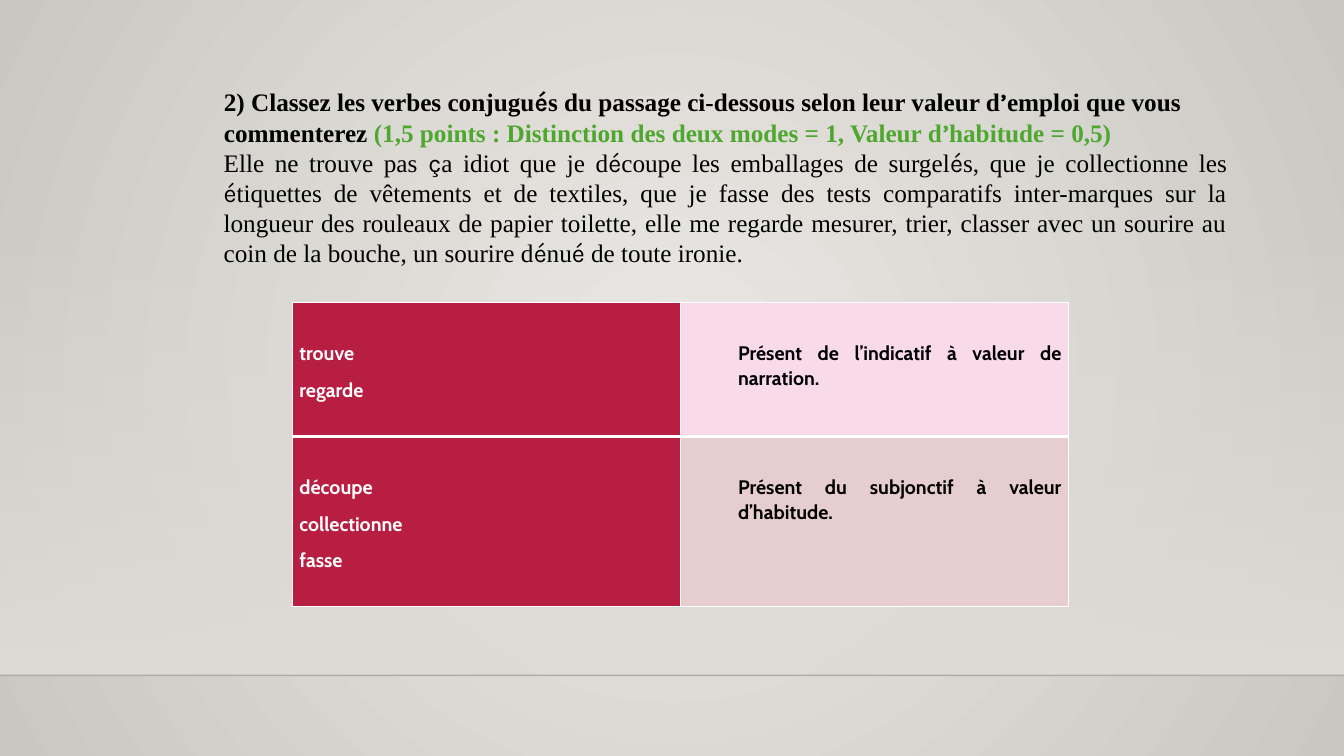
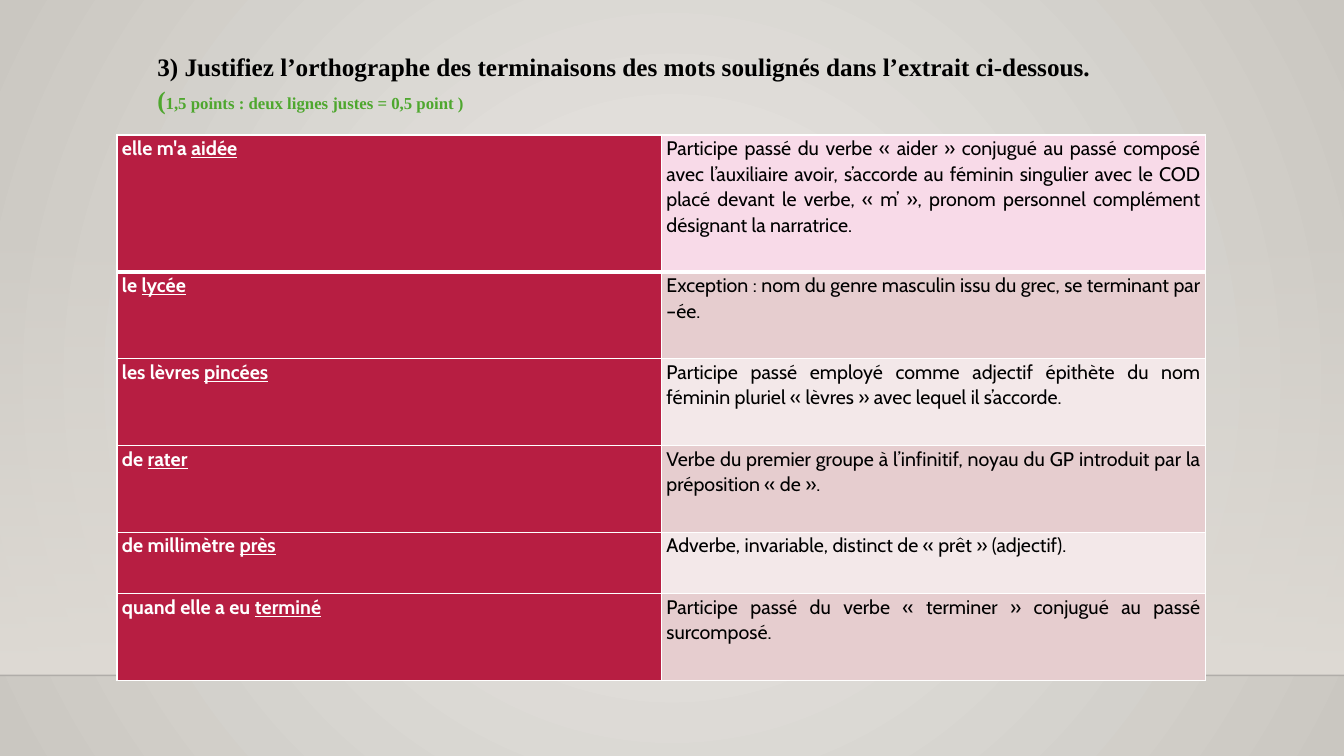
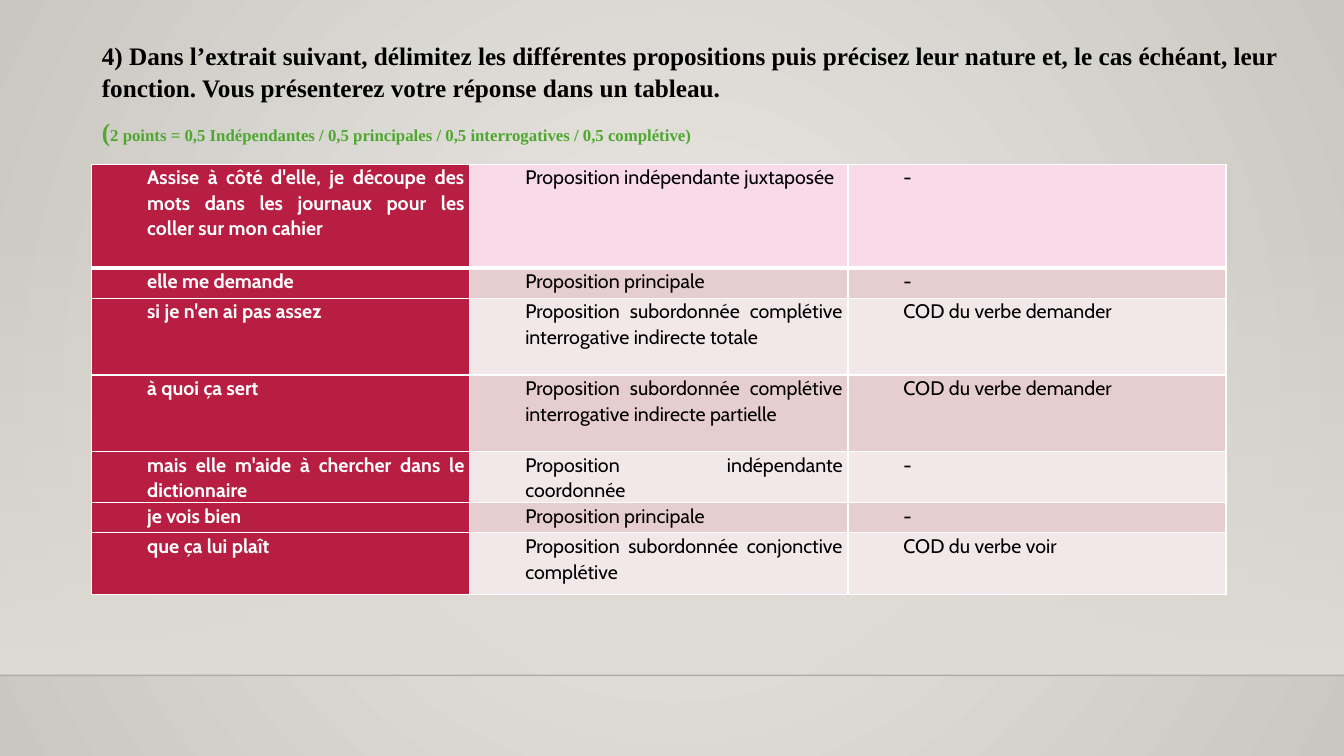
import itertools

import pptx
import pptx.util
import pptx.dml.color
import pptx.enum.shapes
import pptx.enum.text
import pptx.oxml
import pptx.oxml.ns
from lxml import etree

Inches = pptx.util.Inches
Pt = pptx.util.Pt
RGB = pptx.dml.color.RGBColor
ALIGN = pptx.enum.text.PP_ALIGN
ANCHOR = pptx.enum.text.MSO_ANCHOR
qn = pptx.oxml.ns.qn

# Shared look
BLACK, WHITE = RGB(0, 0, 0), RGB(255, 255, 255)
GREEN = RGB(0x4E, 0xA7, 0x2E)
CRIMSON = RGB(0xB7, 0x1E, 0x42)
PINK = RGB(0xF8, 0xDA, 0xE8)
ROSE = RGB(0xE6, 0xCD, 0xCF)
PALE_ROSE = RGB(0xF3, 0xE8, 0xE9)
GLOW, EDGE = RGB(0xEC, 0xEA, 0xE7), RGB(0xCA, 0xC7, 0xC1)
WALL, FLOOR_LINE = RGB(0xDF, 0xDB, 0xD5), RGB(0, 0, 1)
SERIF, ACCENT_FONT, TABLE_FONT = "Times New Roman", "Karla", "Cabin"
ACCENTS = "éç’"
SLIDE_W, SLIDE_H, FLOOR = 13.33, 7.5, 6.7

# Headings: paragraphs of (text, size, colour)
VERBS_TITLE = [[
    ("2) Classez les verbes conjugués du passage ci-dessous selon leur valeur "
     "d’emploi que vous commenterez ", 18, BLACK),
    ("(1,5 points : Distinction des deux modes = 1, Valeur d’habitude = 0,5)",
     18, GREEN)]]
VERBS_PASSAGE = [[
    ("Elle ne trouve pas ça idiot que je découpe les emballages de surgelés, "
     "que je collectionne les étiquettes de vêtements et de textiles, que je "
     "fasse des tests comparatifs inter-marques sur la longueur des rouleaux "
     "de papier toilette, elle me regarde mesurer, trier, classer avec un "
     "sourire au coin de la bouche, un sourire dénué de toute ironie.",
     18, BLACK)]]
SPELLING_TITLE = [
    [("3) Justifiez l’orthographe des terminaisons des mots soulignés dans "
      "l’extrait ci-dessous.", 18, BLACK)],
    [("(", 18, GREEN),
     ("1,5 points : deux lignes justes = 0,5 point )", 12, GREEN)]]
CLAUSES_TITLE = [
    [("4) Dans l’extrait suivant, délimitez les différentes propositions puis "
      "précisez leur nature et, le cas échéant, leur fonction. Vous "
      "présenterez votre réponse dans un tableau.", 18, BLACK)],
    [("(", 18, GREEN),
     ("2 points = 0,5 Indépendantes / 0,5 principales / 0,5 interrogatives / "
      "0,5 complétive)", 12, GREEN)]]

# Tables: rows of cells; a list holds several paragraphs,
# a tuple holds plain text and its underlined word
VERBS = [
    (["trouve", "regarde"], "Présent de l’indicatif à valeur de narration."),
    (["découpe", "collectionne", "fasse"],
     "Présent du subjonctif à valeur d’habitude."),
]
SPELLING = [
    (("elle m'a ", "aidée"),
     "Participe passé du verbe « aider » conjugué au passé composé avec "
     "l’auxiliaire avoir, s’accorde au féminin singulier avec le COD placé "
     "devant le verbe, « m’ », pronom personnel complément désignant la "
     "narratrice."),
    (("le ", "lycée"),
     "Exception : nom du genre masculin issu du grec, se terminant par –ée."),
    (("les lèvres ", "pincées"),
     "Participe passé employé comme adjectif épithète du nom féminin pluriel "
     "« lèvres » avec lequel il s’accorde."),
    (("de ", "rater"),
     "Verbe du premier groupe à l’infinitif, noyau du GP introduit par la "
     "préposition « de »."),
    (("de millimètre ", "près"),
     "Adverbe, invariable, distinct de « prêt » (adjectif)."),
    (("quand elle a eu ", "terminé"),
     "Participe passé du verbe « terminer » conjugué au passé surcomposé."),
]
CLAUSES = [
    ("Assise à côté d'elle, je découpe des mots dans les journaux pour les "
     "coller sur mon cahier", "Proposition indépendante juxtaposée", "-"),
    ("elle me demande", "Proposition principale", "-"),
    ("si je n'en ai pas assez",
     "Proposition subordonnée complétive interrogative indirecte totale",
     "COD du verbe demander"),
    ("à quoi ça sert",
     "Proposition subordonnée complétive interrogative indirecte partielle",
     "COD du verbe demander"),
    ("mais elle m'aide à chercher dans le dictionnaire",
     "Proposition indépendante coordonnée", "-"),
    ("je vois bien", "Proposition principale", "-"),
    ("que ça lui plaît", "Proposition subordonnée conjonctive complétive",
     "COD du verbe voir"),
]


def set_alpha(fill_color, percent):
    alpha = etree.SubElement(fill_color, qn("a:alpha"))
    alpha.set("val", str(percent * 1000))


def two_stop_gradient(fill, first, last):
    fill.gradient()
    for stop, color in zip(fill.gradient_stops, (first, last)):
        stop.color.rgb = color


def decorate_master(prs, slide):
    """Put the radial background, wall and floor line on the master."""
    master = prs.slide_master
    two_stop_gradient(master.background.fill, GLOW, EDGE)
    linear = master.element.xpath("p:cSld/p:bg//a:lin")[0]
    radial = etree.Element(qn("a:path"), path="circle")
    etree.SubElement(radial, qn("a:fillToRect"),
                     l="50000", t="50000", r="50000", b="50000")
    linear.getparent().replace(linear, radial)

    wall = slide.shapes.add_shape(
        pptx.enum.shapes.MSO_SHAPE.RECTANGLE,
        0, Inches(2.21), Inches(SLIDE_W), Inches(FLOOR - 2.21))
    wall.shadow.inherit = False
    wall.line.fill.background()
    two_stop_gradient(wall.fill, WALL, WALL)
    wall.fill.gradient_angle = 270
    set_alpha(wall._element.xpath(".//a:gs/a:srgbClr")[0], 0)

    floor = slide.shapes.add_connector(
        pptx.enum.shapes.MSO_CONNECTOR.STRAIGHT,
        0, Inches(FLOOR), Inches(SLIDE_W), Inches(FLOOR))
    floor.line.color.rgb = FLOOR_LINE
    floor.line.width = Pt(1)
    set_alpha(floor._element.xpath(".//a:ln//a:srgbClr")[0], 20)
    etree.SubElement(floor._element.spPr, qn("a:effectLst"))

    tree = master.element.cSld.spTree
    for offset, part in enumerate((wall, floor)):
        part._element.xpath(".//p:cNvPr")[0].set("id", str(101 + offset))
        tree.insert(2 + offset, part._element)


def font_pieces(text, accent_font):
    """Split text so that accented letters get their own font."""
    if not accent_font:
        return [(text, SERIF)]
    groups = itertools.groupby(text, lambda letter: letter in ACCENTS)
    return [("".join(letters), accent_font if accented else SERIF)
            for accented, letters in groups]


def write_text(shape, box, paragraphs, bold=True, align=ALIGN.LEFT,
               spacing=None, gap=0, accent_font=None):
    shape.left, shape.top, shape.width, shape.height = map(Inches, box)
    frame = shape.text_frame
    frame.word_wrap = True
    frame.auto_size = pptx.enum.text.MSO_AUTO_SIZE.NONE
    frame.vertical_anchor = ANCHOR.TOP
    for index, pieces in enumerate(paragraphs):
        paragraph = frame.add_paragraph() if index else frame.paragraphs[0]
        paragraph.alignment = align
        paragraph.space_after = Pt(gap)
        if spacing:
            paragraph.line_spacing = spacing
        for text, size, color in pieces:
            for letters, font in font_pieces(text, accent_font):
                run = paragraph.add_run()
                run.text = letters
                run.font.name, run.font.size = font, Pt(size)
                run.font.bold, run.font.color.rgb = bold, color


def add_borders(cell, bottom):
    properties = cell._tc.get_or_add_tcPr()
    widths = {"a:lnL": 1, "a:lnR": 1, "a:lnT": 1, "a:lnB": bottom}
    for index, (side, width) in enumerate(widths.items()):
        line = etree.Element(qn(side), w=str(int(Pt(width))))
        fill = etree.SubElement(line, qn("a:solidFill"))
        etree.SubElement(fill, qn("a:srgbClr"), val=str(WHITE))
        properties.insert(index, line)


def fill_cell(cell, content, color, bold, align, indent):
    frame = cell.text_frame
    lines = content if isinstance(content, list) else [content]
    for index, line in enumerate(lines):
        paragraph = frame.add_paragraph() if index else frame.paragraphs[0]
        paragraph.alignment = align
        paragraph.line_spacing = 1.07
        # The last paragraph must not stretch the row
        paragraph.space_after = Pt(8 if index < len(lines) - 1 else 0)
        if indent:
            properties = paragraph._p.get_or_add_pPr()
            properties.set("marL", str(int(Inches(indent))))
            properties.set("indent", "0")
        for position, text in enumerate(
                line if isinstance(line, tuple) else (line,)):
            run = paragraph.add_run()
            run.text = text
            run.font.name, run.font.size = TABLE_FONT, Pt(14)
            run.font.bold, run.font.color.rgb = bold, color
            run.font.underline = position == 1


def add_answers(slide, left, top, col_width, heights, rows, indents,
                side=0.05, above=0, all_bold=False, first_align=ALIGN.JUSTIFY):
    columns = len(rows[0])
    table = slide.shapes.add_table(
        len(rows), columns, Inches(left), Inches(top),
        Inches(col_width * columns), Inches(sum(heights))).table
    for column in table.columns:
        column.width = Inches(col_width)
    for r, (height, row) in enumerate(zip(heights, rows)):
        table.rows[r].height = Inches(height)
        stripe = PINK if r == 0 else ROSE if r % 2 else PALE_ROSE
        for c, content in enumerate(row):
            cell = table.cell(r, c)
            cell.margin_left = cell.margin_right = Inches(side)
            cell.margin_top, cell.margin_bottom = Inches(above), 0
            cell.fill.solid()
            cell.fill.fore_color.rgb = stripe if c else CRIMSON
            add_borders(cell, bottom=1 if r else 3)
            fill_cell(cell, content, BLACK if c else WHITE,
                      all_bold or c == 0,
                      ALIGN.JUSTIFY if c else first_align, indents[c])


def main():
    prs = pptx.Presentation()
    prs.slide_width, prs.slide_height = Inches(SLIDE_W), Inches(SLIDE_H)
    verbs, spelling, clauses = [
        prs.slides.add_slide(prs.slide_layouts[5]) for _ in range(3)]
    decorate_master(prs, verbs)

    # Question 2: verbs
    write_text(verbs.shapes.title, (2.12, 0.81, 10.15, 0.7), VERBS_TITLE,
               accent_font=ACCENT_FONT)
    passage = verbs.shapes.add_textbox(0, 0, 0, 0)
    write_text(passage, (2.12, 1.41, 10.15, 1.3), VERBS_PASSAGE, bold=False,
               align=ALIGN.JUSTIFY, accent_font=ACCENT_FONT)
    add_answers(verbs, 2.9, 3, 3.85, [1.33, 1.69], VERBS, (0, 0.5), side=0.07,
                above=0.37, all_bold=True, first_align=ALIGN.LEFT)

    # Question 3: spelling
    write_text(spelling.shapes.title, (1.46, 0.44, 10.51, 0.73),
               SPELLING_TITLE, spacing=1.07)
    add_answers(spelling, 1.16, 1.34, 5.4,
                [1.36, 0.86, 0.86, 0.86, 0.61, 0.86], SPELLING, (0, 0))

    # Question 4: clauses
    write_text(clauses.shapes.title, (0.91, 0.33, 11.96, 1.16),
               CLAUSES_TITLE, spacing=1.07, gap=8)
    add_answers(clauses, 0.91, 1.63, 3.75,
                [1.03, 0.3, 0.76, 0.76, 0.5, 0.3, 0.61], CLAUSES,
                (0.5, 0.5, 0.5))

    prs.save("out.pptx")


if __name__ == "__main__":
    main()
